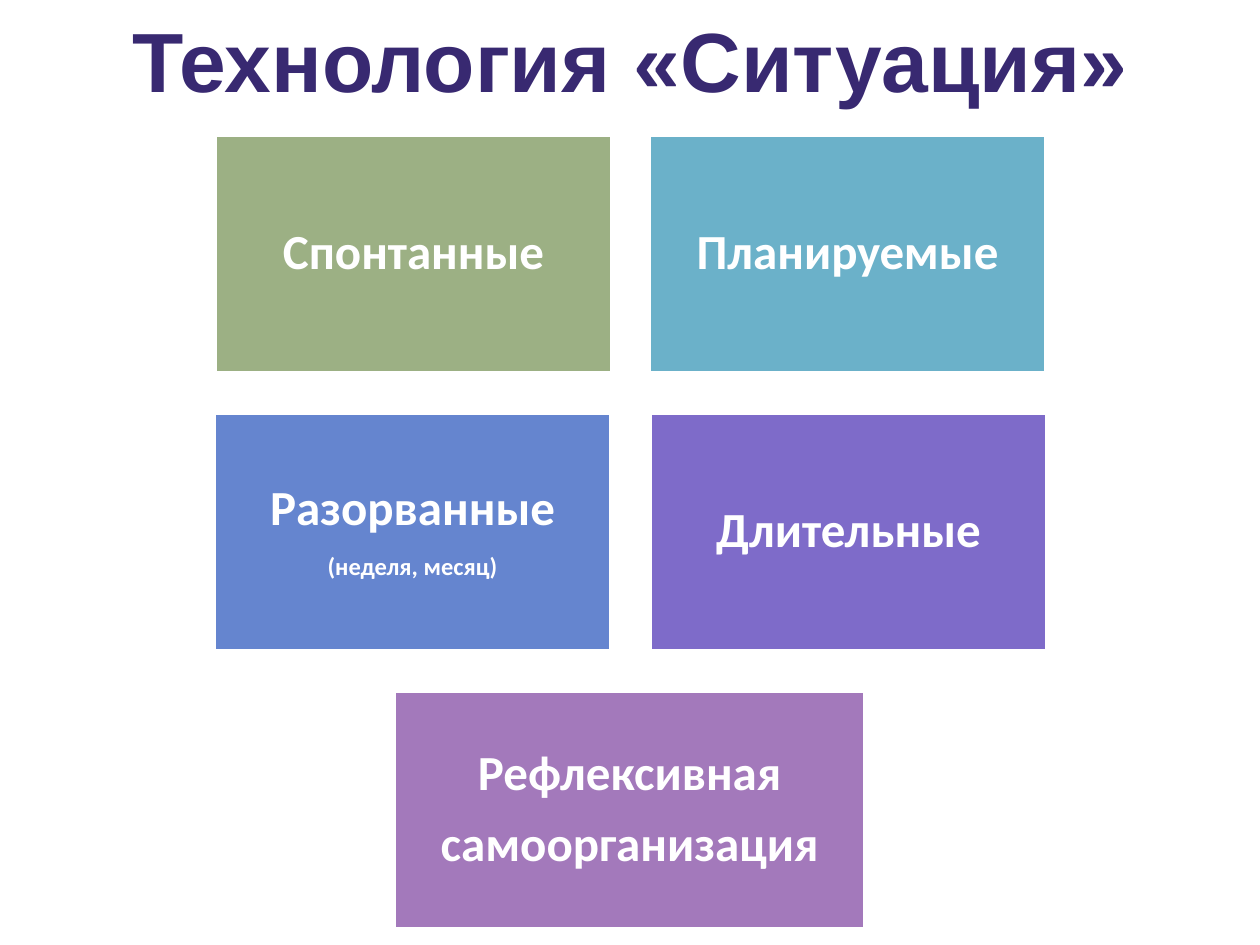
from pptx import Presentation
from pptx.dml.color import RGBColor
from pptx.enum.shapes import MSO_SHAPE
from pptx.enum.text import MSO_ANCHOR, PP_ALIGN
from pptx.util import Emu, Pt

THEME = {
    "title": "382971", "white": "FFFFFF",
    "green": "9CB084", "teal": "6BB1C9", "blue": "6585CF",
    "violet": "7E6BC9", "mauve": "A379BB",
    "title_size": 48, "card_size": 28, "note_size": 14,
}


def px(length):
    return Emu(round(length * 914400 / 126))


def write(para, text, *, font, size, color, before=0, spacing=1.0):
    para.alignment = PP_ALIGN.CENTER
    para.line_spacing = spacing
    para.space_before = Pt(before)
    span = para.add_run()
    span.text = text
    span.font.name = font
    span.font.size = Pt(size)
    span.font.bold = True
    span.font.color.rgb = RGBColor.from_string(THEME[color])


deck = Presentation()
deck.slide_width, deck.slide_height = px(1260), px(945)
page = deck.slides.add_slide(deck.slide_layouts[6])

# Title
title = page.shapes.add_textbox(px(63), px(9), px(1134), px(97))
frame = title.text_frame
frame.word_wrap = True
frame.margin_top = frame.margin_bottom = 0
write(frame.paragraphs[0], "Технология «Ситуация»", font="Arial",
      size=THEME["title_size"], color="title")

# Cards: row, left edge, width, colour, lines with their size
ROW_TOP, ROW_STEP, CARD_HEIGHT, INSET = 135, 278, 238, 15
cards = [
    (0, 215, 397, "green", [("Спонтанные", "card_size")]),
    (0, 649, 397, "teal", [("Планируемые", "card_size")]),
    (1, 214, 397, "blue", [("Разорванные", "card_size"),
                           ("(неделя, месяц)", "note_size")]),
    (1, 650, 397, "violet", [("Длительные", "card_size")]),
    (2, 394, 471, "mauve", [("Рефлексивная", "card_size"),
                            ("самоорганизация", "card_size")]),
]
for row, left, width, color, lines in cards:
    card = page.shapes.add_shape(
        MSO_SHAPE.RECTANGLE, px(left), px(ROW_TOP + row * ROW_STEP),
        px(width), px(CARD_HEIGHT))
    card.shadow.inherit = False
    card.fill.solid()
    card.fill.fore_color.rgb = RGBColor.from_string(THEME[color])
    card.line.color.rgb = RGBColor.from_string(THEME["white"])
    card.line.width = Pt(2)

    frame = card.text_frame
    frame.word_wrap = True
    frame.vertical_anchor = MSO_ANCHOR.MIDDLE
    frame.margin_left = frame.margin_right = px(INSET)
    frame.margin_top = frame.margin_bottom = px(INSET)
    for index, (text, size) in enumerate(lines):
        para = frame.add_paragraph() if index else frame.paragraphs[0]
        write(para, text, font="Calibri", size=THEME[size], color="white",
              before=10 if index else 0, spacing=0.9)

deck.save("out.pptx")
